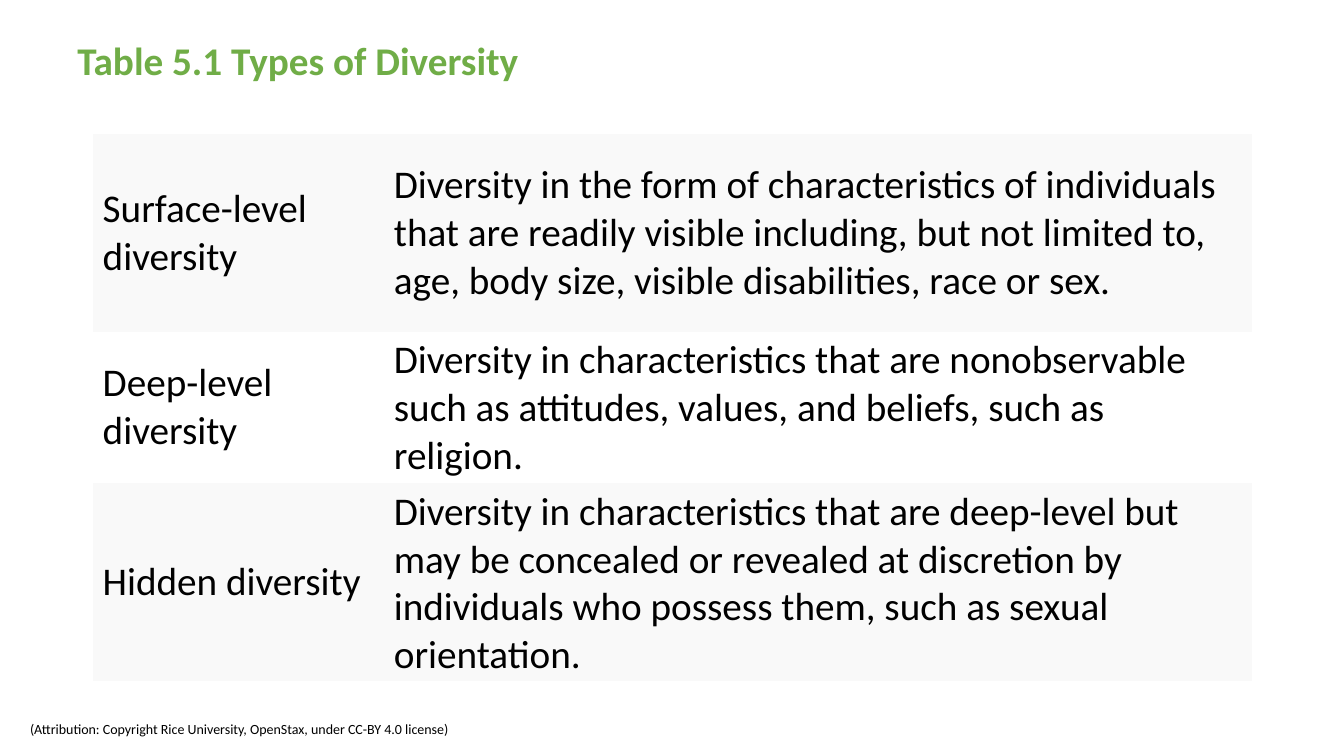
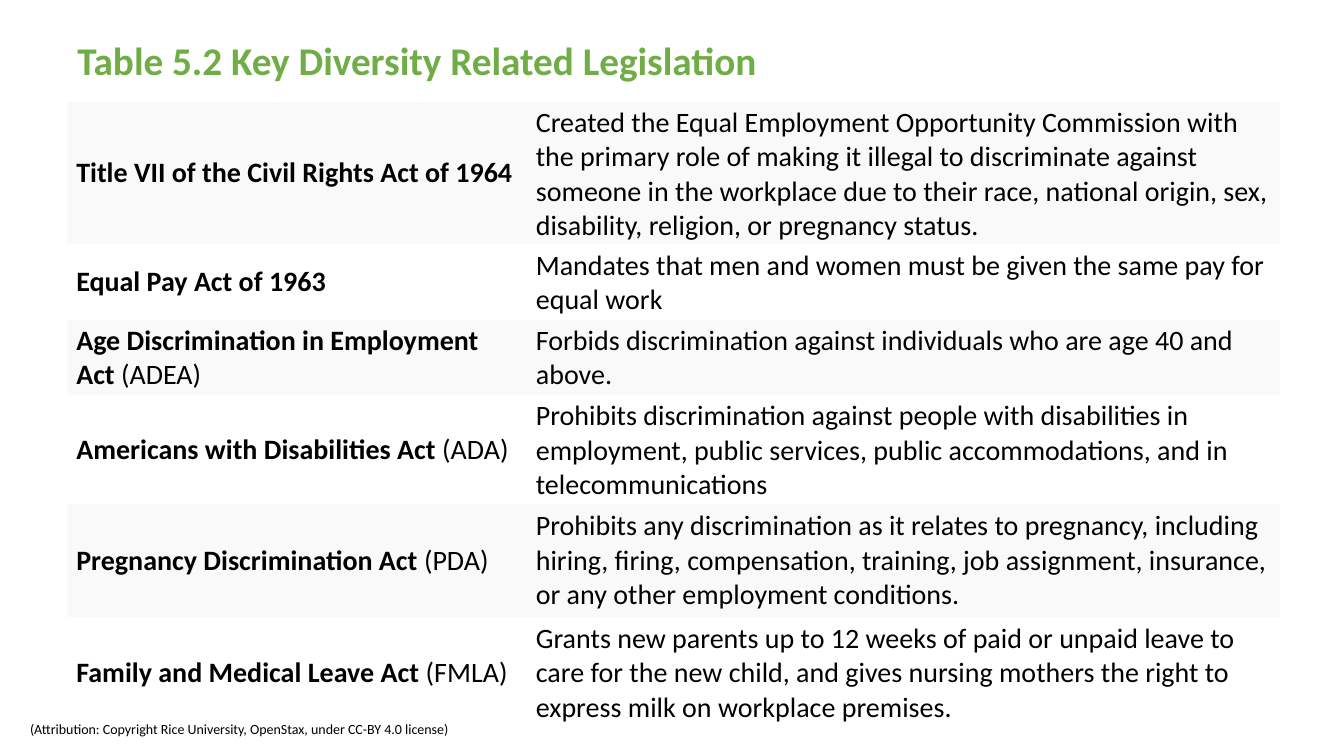
from pptx import Presentation
from pptx.dml.color import RGBColor
from pptx.enum.text import MSO_ANCHOR, MSO_AUTO_SIZE, PP_ALIGN
from pptx.util import Pt

# Shared look
FONT = "Calibri"
GREEN = RGBColor(0x70, 0xAD, 0x47)
BLACK = RGBColor(0x00, 0x00, 0x00)
BAND = RGBColor(0xF9, 0xF9, 0xF9)
NO_GRID_STYLE = "{2D5ABB26-0587-4C30-8999-92F81FD0307C}"
ATTRIBUTION = "(Attribution: Copyright Rice University, OpenStax, under CC-BY 4.0 license)"

# Content: each row is (term, abbreviation, description)
DIVERSITY_TYPES = [
    ("Surface-level diversity", "",
     "Diversity in the form of characteristics of individuals that are readily visible "
     "including, but not limited to, age, body size, visible disabilities, race or sex."),
    ("Deep-level diversity", "",
     "Diversity in characteristics that are nonobservable such as attitudes, values, "
     "and beliefs, such as religion."),
    ("Hidden diversity", "",
     "Diversity in characteristics that are deep-level but may be concealed or revealed "
     "at discretion by individuals who possess them, such as sexual orientation."),
]
LEGISLATION = [
    ("Title VII of the Civil Rights Act of 1964", "",
     "Created the Equal Employment Opportunity Commission with the primary role of making "
     "it illegal to discriminate against someone in the workplace due to their race, "
     "national origin, sex, disability, religion, or pregnancy status."),
    ("Equal Pay Act of 1963", "",
     "Mandates that men and women must be given the same pay for equal work"),
    ("Age Discrimination in Employment Act", " (ADEA)",
     "Forbids discrimination against individuals who are age 40 and above."),
    ("Americans with Disabilities Act", " (ADA)",
     "Prohibits discrimination against people with disabilities in employment, public "
     "services, public accommodations, and in telecommunications"),
    ("Pregnancy Discrimination Act", " (PDA)",
     "Prohibits any discrimination as it relates to pregnancy, including hiring, firing, "
     "compensation, training, job assignment, insurance, or any other employment conditions."),
    ("Family and Medical Leave Act", " (FMLA)",
     "Grants new parents up to 12 weeks of paid or unpaid leave to care for the new child, "
     "and gives nursing mothers the right to express milk on workplace premises."),
]
SLIDES = [
    dict(title="Table 5.1 Types of Diversity", title_width=846.7, rows=DIVERSITY_TYPES,
         origin=(66.2, 95.8), columns=(208, 620), heights=(141, 98.6, 141),
         size=28, bold_terms=False, margins=(7.2, 3.6)),
    dict(title="Table 5.2 Key Diversity Related Legislation", title_width=701.3,
         rows=LEGISLATION, origin=(48, 72.7), columns=(328.3, 537.8),
         heights=(99.4, 43.9, 43.9, 61.9, 80.6, 80.6),
         size=20, bold_terms=True, margins=(6.5, 2.9)),
]


def set_font(font, size, color, bold=False):
    font.name, font.size, font.bold = FONT, Pt(size), bold
    font.color.rgb = color


def add_title(slide, text, width):
    title = slide.shapes.title
    title.left, title.top, title.width, title.height = Pt(48), Pt(18.7), Pt(width), Pt(52)
    frame = title.text_frame
    frame.text = text
    frame.auto_size = MSO_AUTO_SIZE.NONE
    frame.vertical_anchor = MSO_ANCHOR.MIDDLE
    paragraph = frame.paragraphs[0]
    paragraph.alignment = PP_ALIGN.LEFT
    paragraph.line_spacing = 0.9
    set_font(paragraph.font, 28, GREEN, True)


def add_attribution(slide):
    frame = slide.shapes.add_textbox(Pt(14.4), Pt(511.2), Pt(319.7), Pt(19.4)).text_frame
    frame.text = ATTRIBUTION
    frame.word_wrap = False
    frame.auto_size = MSO_AUTO_SIZE.SHAPE_TO_FIT_TEXT
    set_font(frame.paragraphs[0].font, 10, BLACK)


def add_banded_table(slide, rows, origin, columns, heights, size, bold_terms, margins):
    left, top = origin
    holder = slide.shapes.add_table(len(rows), len(columns), Pt(left), Pt(top),
                                    Pt(sum(columns)), Pt(sum(heights)))
    table = holder.table
    table.first_row = table.horz_banding = False
    table._tbl.tblPr.find("{*}tableStyleId").text = NO_GRID_STYLE
    for column, width in zip(table.columns, columns):
        column.width = Pt(width)
    for row, height in zip(table.rows, heights):
        row.height = Pt(height)

    for r, (term, abbreviation, description) in enumerate(rows):
        for c, parts in enumerate([(term, abbreviation), (description,)]):
            cell = table.cell(r, c)
            cell.vertical_anchor = MSO_ANCHOR.MIDDLE
            cell.margin_left = cell.margin_right = Pt(margins[0])
            cell.margin_top = cell.margin_bottom = Pt(margins[1])
            # Every other row is shaded, from the first
            if r % 2 == 0:
                cell.fill.solid()
                cell.fill.fore_color.rgb = BAND
            else:
                cell.fill.background()
            paragraph = cell.text_frame.paragraphs[0]
            for part in filter(None, parts):
                run = paragraph.add_run()
                run.text = part
                set_font(run.font, size, BLACK, bold_terms and part == term)


def main():
    deck = Presentation()
    deck.slide_width, deck.slide_height = Pt(960), Pt(540)
    for content in SLIDES:
        slide = deck.slides.add_slide(deck.slide_layouts[5])
        table_content = dict(content)
        add_title(slide, table_content.pop("title"), table_content.pop("title_width"))
        add_attribution(slide)
        add_banded_table(slide, **table_content)
    deck.save("out.pptx")


if __name__ == "__main__":
    main()
